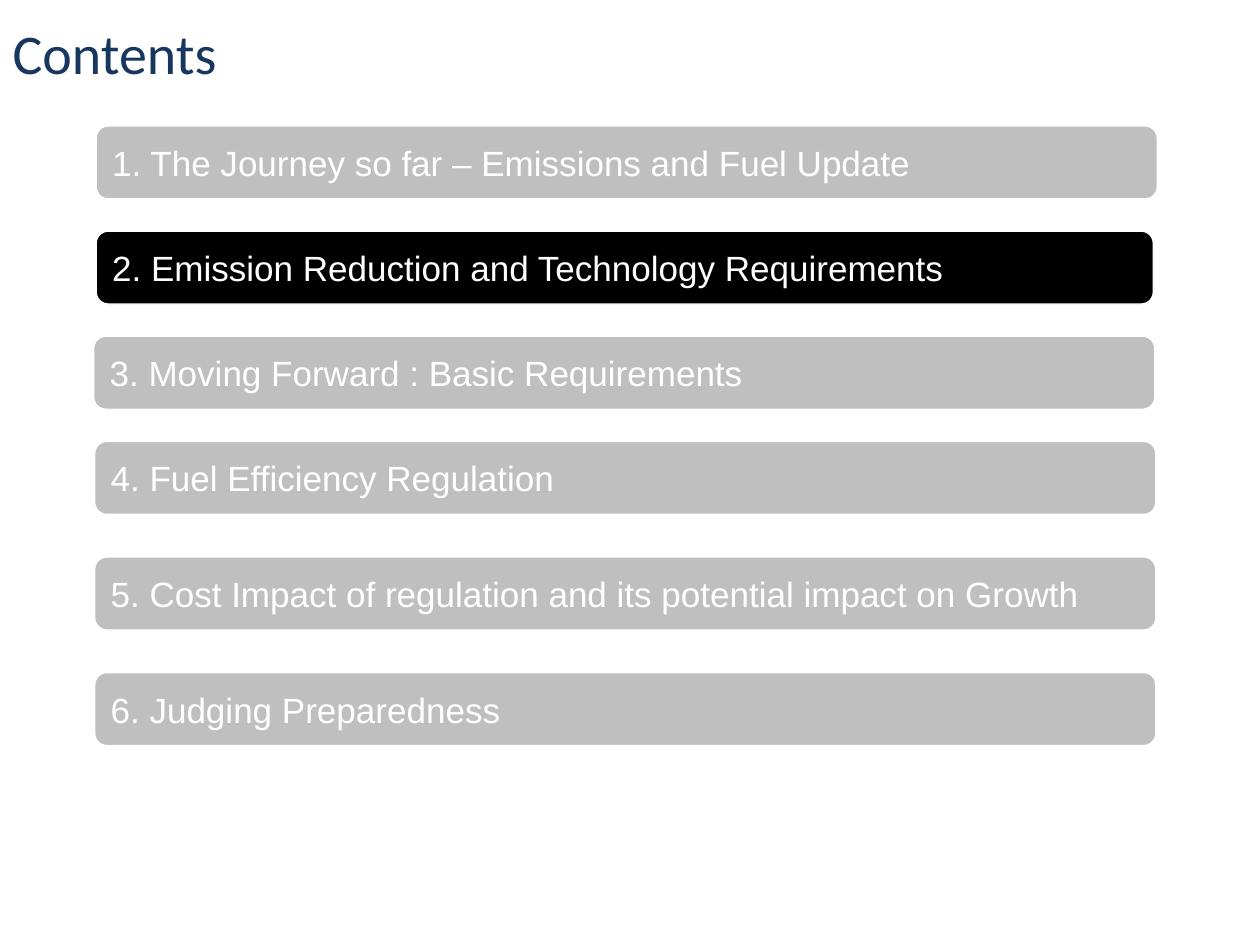
from pptx import Presentation
from pptx.dml.color import RGBColor
from pptx.enum.shapes import MSO_SHAPE
from pptx.enum.text import MSO_ANCHOR, PP_ALIGN
from pptx.util import Cm, Pt

NAVY, GREY, BLACK, WHITE = "17375E", "BFBFBF", "000000", "FFFFFF"
BAR_HEIGHT = 1.47
FIRST_TOP = 2.54
UPPER_PITCH, LOWER_PITCH = 2.12, 2.33
UPPER_COUNT = 4  # bars before the spacing widens

# Heading, left edge, width and fill of each bar
SECTIONS = [
    ("1. The Journey so far – Emissions and Fuel Update", 1.94, 21.39, GREY),
    ("2. Emission Reduction and Technology Requirements", 1.94, 21.31, BLACK),
    ("3. Moving Forward : Basic Requirements", 1.89, 21.39, GREY),
    ("4. Fuel Efficiency Regulation", 1.91, 21.39, GREY),
    ("5. Cost Impact of regulation and its potential impact on Growth", 1.91, 21.39, GREY),
    ("6. Judging Preparedness", 1.91, 21.39, GREY),
]


def color(value):
    return RGBColor.from_string(value)


def set_text(shape, text, font_name, size, font_color):
    frame = shape.text_frame
    frame.word_wrap = True
    frame.vertical_anchor = MSO_ANCHOR.MIDDLE
    paragraph = frame.paragraphs[0]
    paragraph.text = text
    paragraph.alignment = PP_ALIGN.LEFT
    paragraph.font.name = font_name
    paragraph.font.size = Pt(size)
    paragraph.font.color.rgb = color(font_color)


def set_title(slide, text):
    title = slide.shapes.title
    title.left, title.top, title.width, title.height = Cm(0), Cm(0), Cm(25.4), Cm(2.12)
    set_text(title, text, "Calibri", 32, NAVY)


def add_section_bar(slide, text, left, top, width, fill):
    shape = slide.shapes.add_shape(
        MSO_SHAPE.FLOWCHART_ALTERNATE_PROCESS,
        Cm(left), Cm(top), Cm(width), Cm(BAR_HEIGHT),
    )
    shape.shadow.inherit = False
    shape.fill.solid()
    shape.fill.fore_color.rgb = color(fill)
    shape.line.color.rgb = color(WHITE)
    shape.line.width = Pt(0.75)
    set_text(shape, text, "Arial", 20, WHITE)


def main():
    presentation = Presentation()
    presentation.slide_width, presentation.slide_height = Cm(25.4), Cm(19.05)
    slide = presentation.slides.add_slide(presentation.slide_layouts[5])

    set_title(slide, "Contents")

    # Section bars, top to bottom
    top = FIRST_TOP
    for number, (text, left, width, fill) in enumerate(SECTIONS, start=1):
        add_section_bar(slide, text, left, top, width, fill)
        top += UPPER_PITCH if number < UPPER_COUNT else LOWER_PITCH

    presentation.save("out.pptx")


if __name__ == "__main__":
    main()
